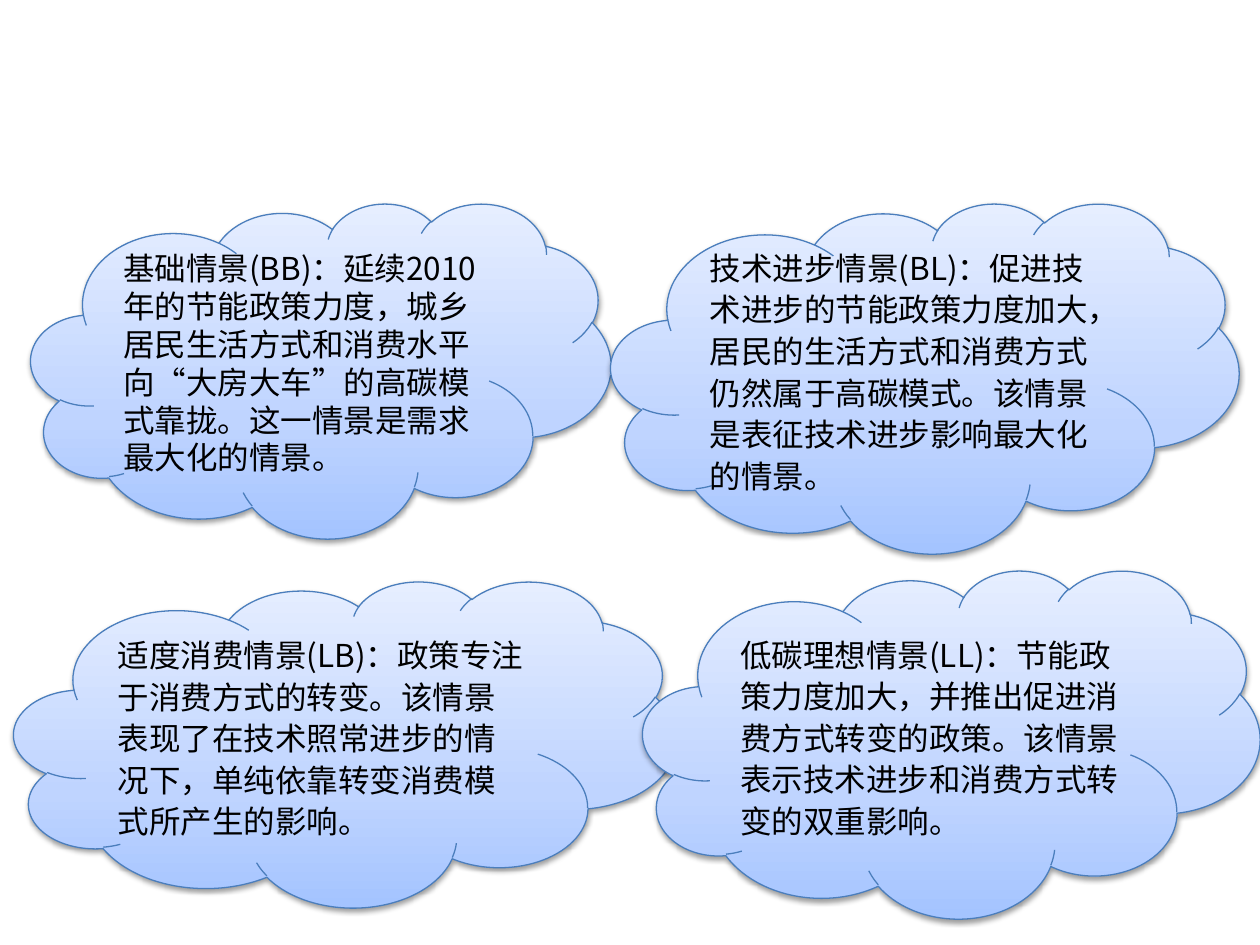
from lxml.etree import SubElement
from pptx import Presentation
from pptx.dml.color import RGBColor
from pptx.enum.shapes import MSO_SHAPE
from pptx.enum.text import MSO_ANCHOR, PP_ALIGN
from pptx.oxml import parse_xml
from pptx.oxml.ns import nsdecls, qn
from pptx.util import Pt

PX = 914400 // 126
FONT = "Noto Sans CJK SC"
COLORS = {
    "cloud_bottom": "A4C4FF",
    "cloud_middle": "BFD4FF",
    "cloud_top": "E6EEFF",
    "outline": "4B7EBC",
    "text": "000000",
    "shadow": "000000",
}
GRADIENT = {0: "cloud_bottom", 35: "cloud_middle", 100: "cloud_top"}

# Left, top, width and height in px, line spacing, text
SCENARIOS = [
    ((31, 203, 580, 335), 1.0,
     "基础情景(BB)：延续2010年的节能政策力度，城乡居民生活方式和消费水平向“大房大车”的高碳模式靠拢。"
     "这一情景是需求最大化的情景。"),
    ((611, 203, 628, 350), 1.1,
     "技术进步情景(BL)：促进技术进步的节能政策力度加大，居民的生活方式和消费方式仍然属于高碳模式。"
     "该情景是表征技术进步影响最大化的情景。"),
    ((14, 581, 663, 326), 1.1,
     "适度消费情景(LB)：政策专注于消费方式的转变。该情景表现了在技术照常进步的情况下，"
     "单纯依靠转变消费模式所产生的影响。"),
    ((643, 570, 617, 348), 1.1,
     "低碳理想情景(LL)：节能政策力度加大，并推出促进消费方式转变的政策。"
     "该情景表示技术进步和消费方式转变的双重影响。"),
]


def set_gradient(shape):
    """Fill with the three-stop gradient, running from bottom to top."""
    shape.fill.gradient()
    gradient = shape._element.spPr.find(qn("a:gradFill"))
    stops = "".join(
        f'<a:gs pos="{position * 1000}"><a:srgbClr val="{COLORS[name]}"/></a:gs>'
        for position, name in GRADIENT.items())
    gradient.getparent().replace(gradient, parse_xml(
        f'<a:gradFill {nsdecls("a")} rotWithShape="1"><a:gsLst>{stops}</a:gsLst>'
        '<a:lin ang="16200000" scaled="0"/></a:gradFill>'))


def set_shadow(shape):
    shape.shadow.inherit = False
    effects = shape._element.spPr.find(qn("a:effectLst"))
    shadow = SubElement(effects, qn("a:outerShdw"), blurRad=str(Pt(3.1)),
                        dist=str(Pt(1.6)), dir="5400000", rotWithShape="0")
    color = SubElement(shadow, qn("a:srgbClr"), val=COLORS["shadow"])
    SubElement(color, qn("a:alpha"), val="38000")


def write_text(shape, text, line_spacing):
    frame = shape.text_frame
    frame.word_wrap = True
    frame.vertical_anchor = MSO_ANCHOR.MIDDLE
    paragraph = frame.paragraphs[0]
    for name, value in {"alignment": PP_ALIGN.LEFT, "line_spacing": line_spacing}.items():
        setattr(paragraph, name, value)
    run = paragraph.add_run()
    run.text = text
    for name, value in {"name": FONT, "size": Pt(18)}.items():
        setattr(run.font, name, value)
    run.font.color.rgb = RGBColor.from_string(COLORS["text"])
    SubElement(run.font._element, qn("a:ea"), typeface=FONT)


def add_cloud(slide, box, line_spacing, text):
    shape = slide.shapes.add_shape(MSO_SHAPE.CLOUD, *(length * PX for length in box))
    set_gradient(shape)
    shape.line.color.rgb = RGBColor.from_string(COLORS["outline"])
    shape.line.width = Pt(0.75)
    set_shadow(shape)
    write_text(shape, text, line_spacing)


def main():
    presentation = Presentation()
    presentation.slide_width = 1260 * PX
    presentation.slide_height = 945 * PX
    slide = presentation.slides.add_slide(presentation.slide_layouts[6])
    for box, line_spacing, text in SCENARIOS:
        add_cloud(slide, box, line_spacing, text)
    presentation.save("out.pptx")


if __name__ == "__main__":
    main()
